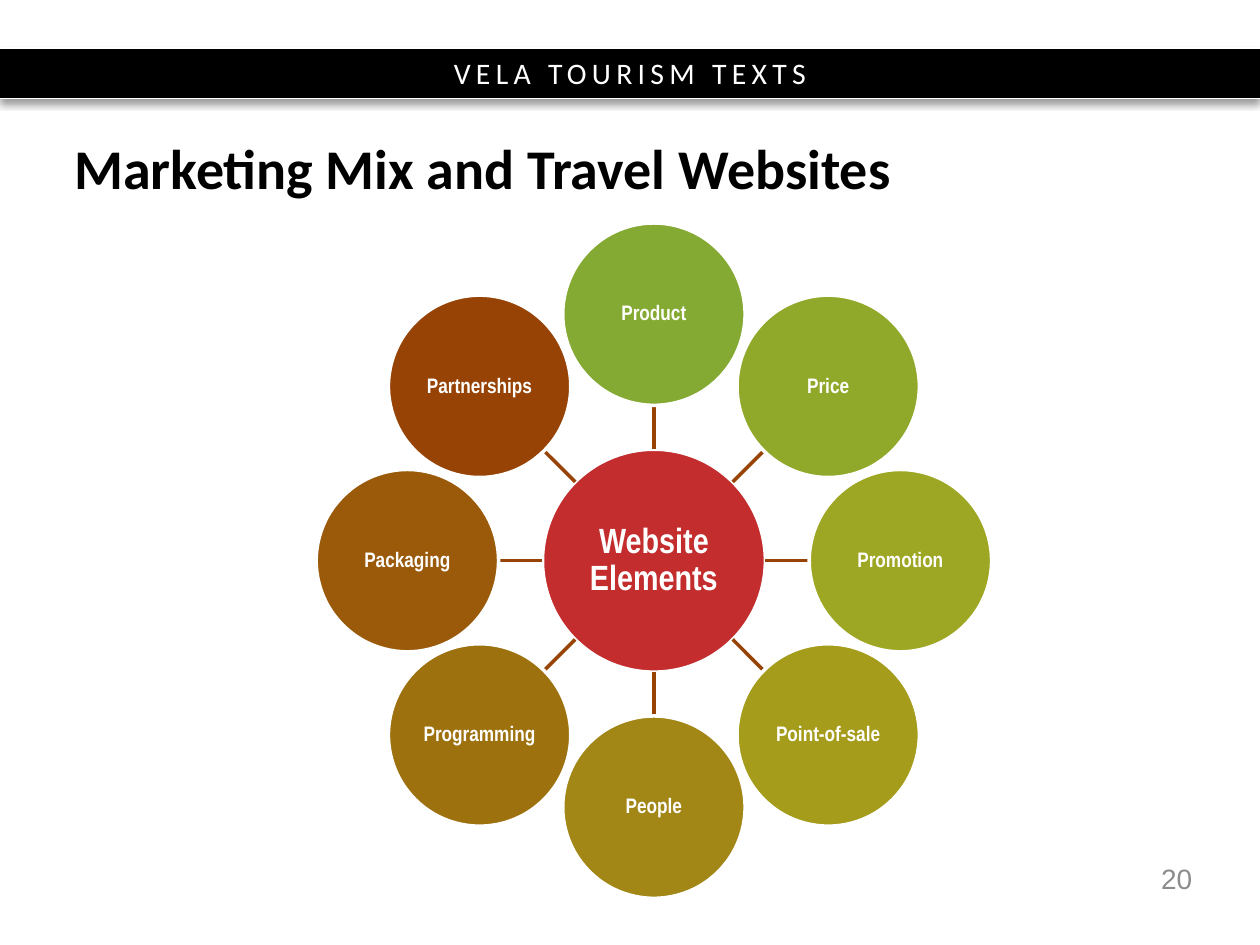
from dataclasses import dataclass
from math import cos, pi, sin

from lxml import etree
from pptx import Presentation
from pptx import util as u
from pptx.dml.color import RGBColor
from pptx.enum import shapes, text
from pptx.oxml.ns import qn


@dataclass(frozen=True)
class Theme:
    """Colours, fonts and type sizes of the deck."""
    ink: str = "000000"
    paper: str = "FFFFFF"
    muted: str = "8C8C8C"
    hub: str = "C32D2E"
    spoke: str = "964305"
    heading_font: str = "Calibri"
    label_font: str = "Arial Narrow"
    number_font: str = "Arial"
    banner_size: int = 17
    title_size: int = 32
    hub_size: int = 20
    petal_size: int = 12
    number_size: int = 16
    edge_width: float = 0.75
    wheel_line: float = 2


@dataclass(frozen=True)
class Box:
    """A rectangle in inches."""
    left: float
    top: float
    width: float
    height: float

    def inner(self, left, top, width, height):
        """Return the inner box given as shares of this one."""
        return Box(self.left + left * self.width, self.top + top * self.height,
                   width * self.width, height * self.height)

    def emu(self):
        """Return the box as lengths for python-pptx."""
        return [u.Inches(v) for v in (self.left, self.top, self.width, self.height)]


THEME = Theme()
PETALS = [
    ("Product", "84AA33"),
    ("Price", "91A92B"),
    ("Promotion", "9EA723"),
    ("Point-of-sale", "A59C1C"),
    ("People", "A28716"),
    ("Programming", "9E710F"),
    ("Packaging", "9A5A0A"),
    ("Partnerships", "964305"),
]


def rgb(value):
    """Return a colour from its hex value."""
    return RGBColor.from_string(value)


def write(shape, words, font, size, color, align, bold=False, inset=0.1):
    """Fill a shape with one styled paragraph and return it."""
    frame = shape.text_frame
    frame.word_wrap = True
    frame.vertical_anchor = text.MSO_ANCHOR.MIDDLE
    frame.margin_left = frame.margin_right = u.Inches(inset)
    frame.margin_top = frame.margin_bottom = u.Inches(inset / 2)
    paragraph = frame.paragraphs[0]
    paragraph.text = words
    paragraph.alignment = align
    paragraph.font.name = font
    paragraph.font.size = u.Pt(size)
    paragraph.font.bold = bold
    paragraph.font.color.rgb = rgb(color)
    return paragraph


def add_solid(slide, kind, box, fill):
    """Add a filled preset shape without outline or shadow."""
    shape = slide.shapes.add_shape(kind, *box.emu())
    shape.shadow.inherit = False
    shape.fill.solid()
    shape.fill.fore_color.rgb = rgb(fill)
    shape.line.fill.background()
    return shape


def add_line(slide, start, end, color, width):
    """Add a straight connector between two points in inches."""
    ends = [u.Inches(v) for v in (*start, *end)]
    line = slide.shapes.add_connector(shapes.MSO_CONNECTOR.STRAIGHT, *ends)
    line.line.color.rgb = rgb(color)
    line.line.width = u.Pt(width)
    etree.SubElement(line._element.spPr, qn("a:effectLst"))


def cast_shadow(shape, color, opacity, blur, distance):
    """Give a shape a soft shadow straight below it."""
    effects = shape._element.spPr.find(qn("a:effectLst"))
    shadow = etree.SubElement(effects, qn("a:outerShdw"), blurRad=str(u.Pt(blur)),
                              dist=str(u.Pt(distance)), dir="5400000", rotWithShape="0")
    tint = etree.SubElement(shadow, qn("a:srgbClr"), val=color)
    etree.SubElement(tint, qn("a:alpha"), val=str(opacity * 1000))


def add_banner(slide, box, words):
    """Draw the series banner with its shadow and white edges."""
    bar = add_solid(slide, shapes.MSO_SHAPE.RECTANGLE, box, THEME.ink)
    cast_shadow(bar, THEME.ink, 40, 4, 3)
    paragraph = write(bar, words, THEME.heading_font, THEME.banner_size,
                      THEME.paper, text.PP_ALIGN.CENTER)
    paragraph.runs[0].font._element.set("spc", "300")
    for y in (box.top, box.top + box.height):
        add_line(slide, (box.left, y), (box.left + box.width, y),
                 THEME.paper, THEME.edge_width)


def add_title(slide, box, words):
    """Write the slide title."""
    shape = slide.shapes.add_textbox(*box.emu())
    paragraph = write(shape, words, THEME.heading_font, THEME.title_size,
                      THEME.ink, text.PP_ALIGN.LEFT, bold=True)
    paragraph.line_spacing = u.Pt(THEME.title_size)


def add_number(slide, box, number):
    """Write the slide number."""
    shape = slide.shapes.add_textbox(*box.emu())
    write(shape, str(number), THEME.number_font, THEME.number_size,
          THEME.muted, text.PP_ALIGN.RIGHT)


def add_disc(slide, box, words, fill, size):
    """Draw one labelled circle of the wheel."""
    disc = add_solid(slide, shapes.MSO_SHAPE.OVAL, box, fill)
    disc.line.color.rgb = rgb(THEME.paper)
    disc.line.width = u.Pt(THEME.wheel_line)
    paragraph = write(disc, words, THEME.label_font, size, THEME.paper,
                      text.PP_ALIGN.CENTER, bold=True, inset=0.01)
    paragraph.line_spacing = 0.9


def add_wheel(slide, box, hub_words, petals):
    """Draw a hub with petals spaced evenly around it, clockwise from the top."""
    hub, petal = 0.33, 0.27
    orbit = (1 - petal) / 2

    def point(angle, radius):
        """Return the spot at an angle and a radius share from the centre."""
        spot = box.inner(0.5 + radius * sin(angle), 0.5 - radius * cos(angle), 0, 0)
        return spot.left, spot.top

    add_disc(slide, box.inner(0.5 - hub / 2, 0.5 - hub / 2, hub, hub),
             hub_words, THEME.hub, THEME.hub_size)
    for index, (words, fill) in enumerate(petals):
        angle = 2 * pi * index / len(petals)
        add_line(slide, point(angle, hub / 2), point(angle, orbit - petal / 2),
                 THEME.spoke, THEME.wheel_line)
        left = 0.5 + orbit * sin(angle) - petal / 2
        top = 0.5 - orbit * cos(angle) - petal / 2
        add_disc(slide, box.inner(left, top, petal, petal), words, fill, THEME.petal_size)


def main():
    """Build the slide and save it."""
    page = Box(0, 0, 10, 7.5)
    presentation = Presentation()
    presentation.slide_width = u.Inches(page.width)
    presentation.slide_height = u.Inches(page.height)
    slide = presentation.slides.add_slide(presentation.slide_layouts[6])
    add_banner(slide, Box(0, 0.38, page.width, 0.4), "VELA TOURISM TEXTS")
    add_title(slide, Box(0.49, 1.13, 9.08, 0.48), "Marketing Mix and Travel Websites")
    add_number(slide, Box(7.23, 6.77, 2.33, 0.4), 20)
    wheel_size = 5.36
    wheel = Box(2.51, 1.77, wheel_size, wheel_size)
    add_wheel(slide, wheel, "Website Elements", PETALS)
    presentation.save("out.pptx")


if __name__ == "__main__":
    main()
